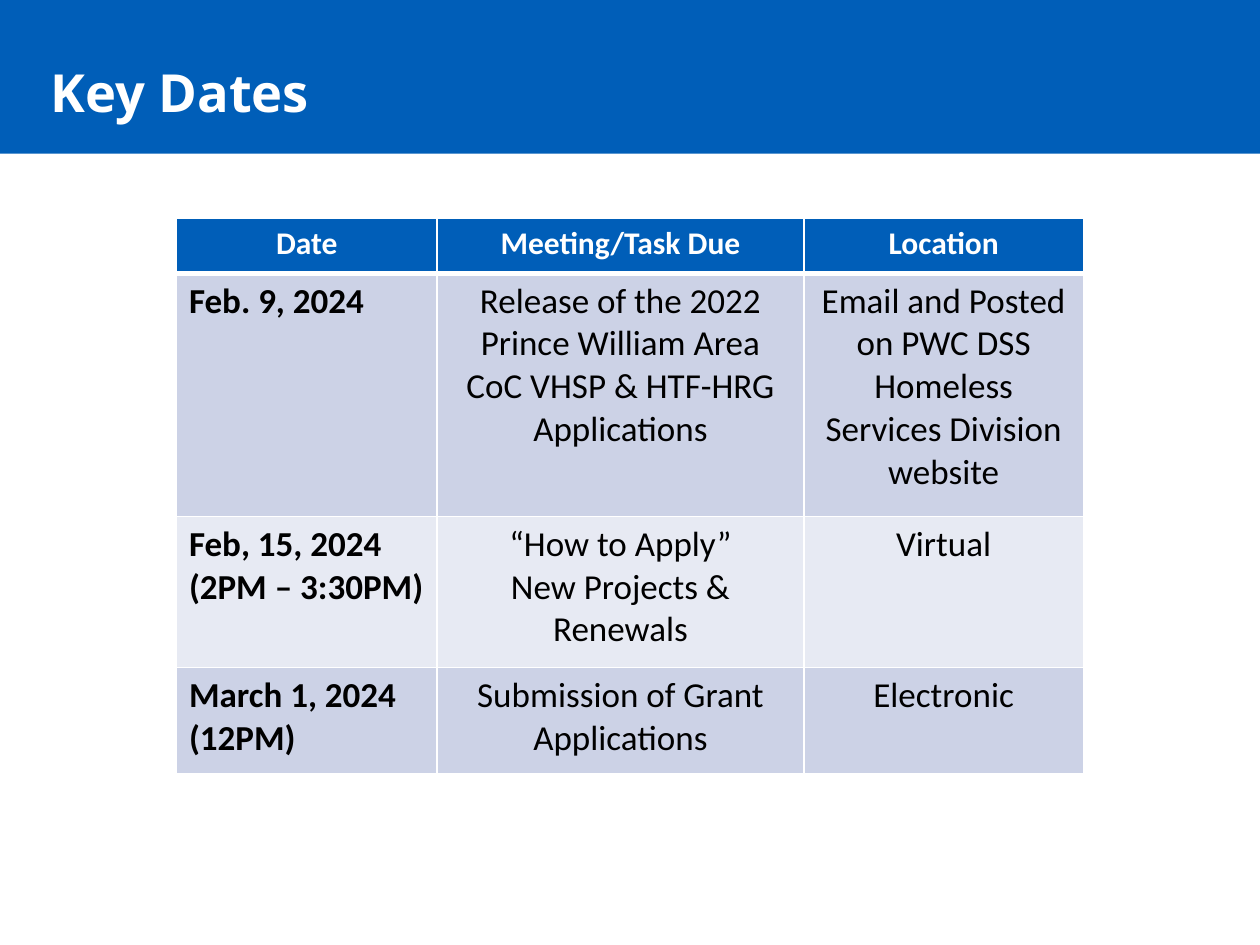
from lxml import etree
from pptx import Presentation
from pptx.dml.color import RGBColor
from pptx.enum import shapes, text
from pptx.oxml import ns
from pptx.util import Inches, Pt

BLUE = RGBColor(0x00, 0x5E, 0xB8)
WHITE = RGBColor(0xFF, 0xFF, 0xFF)
BLACK = RGBColor(0x00, 0x00, 0x00)
BAND_DARK = RGBColor(0xCC, 0xD2, 0xE6)
BAND_LIGHT = RGBColor(0xE7, 0xEA, 0xF3)

# Content: a line break inside a cell starts a new paragraph
TITLE = "Key Dates"
ROWS = [
    ("Date", "Meeting/Task Due", "Location"),
    ("Feb. 9, 2024",
     "Release of the 2022 Prince William Area CoC VHSP & HTF-HRG Applications",
     "Email and Posted on PWC DSS Homeless Services Division website"),
    ("Feb, 15, 2024\n(2PM – 3:30PM)",
     "“How to Apply”\nNew Projects & Renewals",
     "Virtual"),
    ("March 1, 2024 (12PM)", "Submission of Grant Applications", "Electronic"),
]
COLUMN_WIDTHS = [2.07, 2.91, 2.22]
ROW_HEIGHTS = [0.44, 1.93, 1.2, 0.84]


def set_borders(cell, widths):
    """Draw white cell borders; widths maps L, R, T, B to points."""
    properties = cell._tc.get_or_add_tcPr()
    for index, (side, width) in enumerate(widths.items()):
        line = etree.Element(ns.qn(f"a:ln{side}"), w=str(Pt(width)))
        fill = etree.SubElement(line, ns.qn("a:solidFill"))
        etree.SubElement(fill, ns.qn("a:srgbClr"), val=str(WHITE))
        properties.insert(index, line)


def format_cell(cell, content, row, column):
    header = row == 0
    cell.text = content
    cell.fill.solid()
    cell.fill.fore_color.rgb = BLUE if header else BAND_DARK if row % 2 else BAND_LIGHT
    set_borders(cell, {"L": 1, "R": 1, "T": 3 if row == 1 else 1, "B": 3 if header else 1})
    for paragraph in cell.text_frame.paragraphs:
        centred = header or column > 0
        paragraph.alignment = text.PP_ALIGN.CENTER if centred else text.PP_ALIGN.LEFT
        paragraph.font.name = "Calibri"
        paragraph.font.size = Pt(18 if header else 20)
        paragraph.font.bold = header or column == 0
        paragraph.font.color.rgb = WHITE if header else BLACK


presentation = Presentation()
presentation.slide_width, presentation.slide_height = Inches(10), Inches(7.5)
slide = presentation.slides.add_slide(presentation.slide_layouts[5])

# Title band, sent behind the title
band = slide.shapes.add_shape(shapes.MSO_SHAPE.RECTANGLE, 0, 0, Inches(10), Inches(1.22))
band.shadow.inherit = False
band.fill.solid()
band.fill.fore_color.rgb = BLUE
band.line.fill.background()
slide.shapes._spTree.insert(2, band._element)

# Title
title = slide.shapes.title
title.left, title.top, title.width, title.height = map(Inches, (0.3, 0.31, 8.98, 0.84))
title.text_frame.text = TITLE
title.text_frame.vertical_anchor = text.MSO_ANCHOR.MIDDLE
heading = title.text_frame.paragraphs[0]
heading.alignment = text.PP_ALIGN.LEFT
heading.font.name = "Open Sans"
heading.font.size = Pt(30)
heading.font.bold = True
heading.font.color.rgb = WHITE

# Table of dates
table = slide.shapes.add_table(
    len(ROWS), len(COLUMN_WIDTHS), Inches(1.4), Inches(1.73),
    Inches(sum(COLUMN_WIDTHS)), Inches(sum(ROW_HEIGHTS))).table
for column, width in zip(table.columns, COLUMN_WIDTHS):
    column.width = Inches(width)
for row, height in zip(table.rows, ROW_HEIGHTS):
    row.height = Inches(height)
for row_index, contents in enumerate(ROWS):
    for column_index, content in enumerate(contents):
        format_cell(table.cell(row_index, column_index), content, row_index, column_index)

presentation.save("out.pptx")
